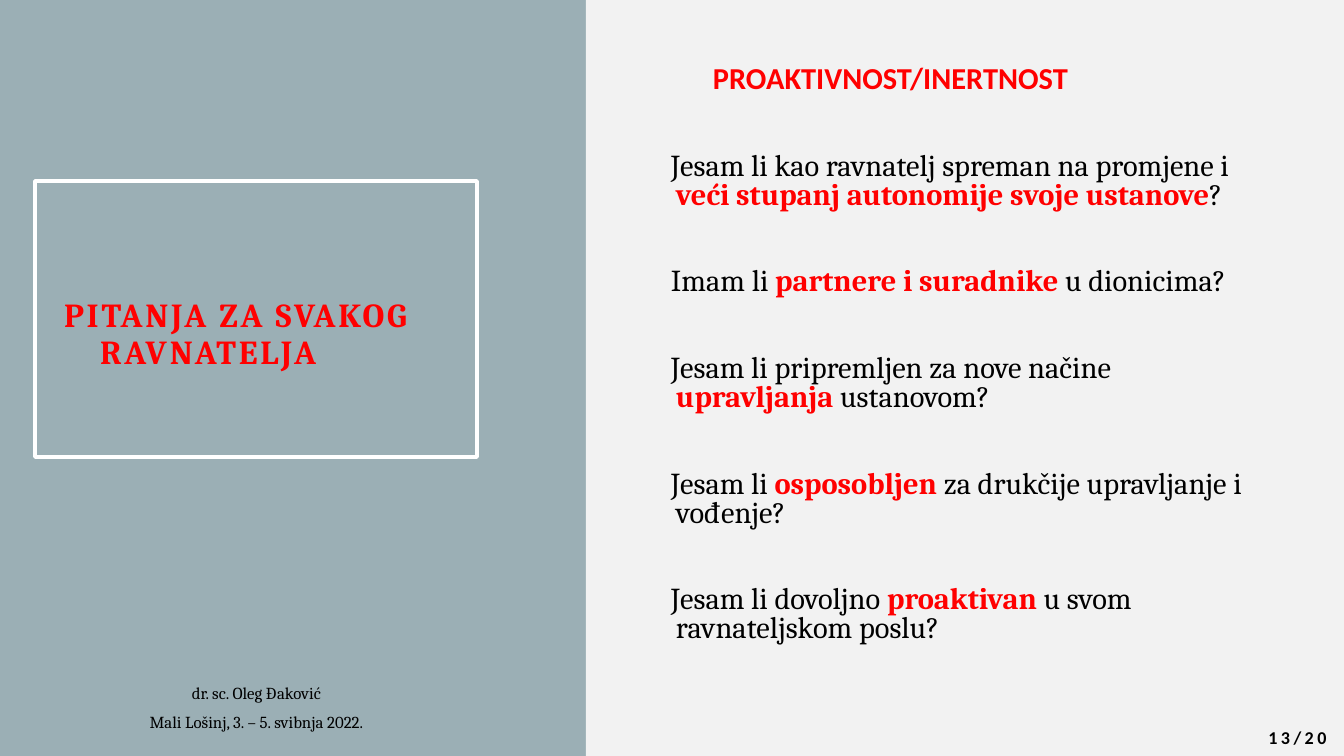
import pptx
import pptx.util
import pptx.dml.color
import pptx.enum.shapes
import pptx.enum.text
import pptx.oxml
import pptx.oxml.ns
from dataclasses import dataclass

SCALE = 914400 / 100.8  # EMU in one px
ALIGN = pptx.enum.text.PP_ALIGN
ANCHOR = pptx.enum.text.MSO_ANCHOR


@dataclass(frozen=True)
class Theme:
    backdrop: str = "9BAFB5"
    panel: str = "F2F2F2"
    frame: str = "FFFFFF"
    accent: str = "FF0000"
    ink: str = "000000"
    serif: str = "Cambria"
    sans: str = "Calibri"
    title_pt: float = 24
    body_pt: float = 21.7
    credit_pt: float = 12
    number_pt: float = 12.9


THEME = Theme()

# Each question: text before the stress, stressed words, text after
QUESTIONS = [
    ("Jesam li kao ravnatelj spreman na promjene i ",
     "veći stupanj autonomije svoje ustanove", "?"),
    ("Imam li ", "partnere i suradnike ", "u dionicima?"),
    ("Jesam li pripremljen za nove načine ", "upravljanja", " ustanovom?"),
    ("Jesam li ", "osposobljen ", "za drukčije upravljanje i vođenje?"),
    ("Jesam li dovoljno ", "proaktivan", " u svom ravnateljskom poslu?"),
]


def px(n):
    return pptx.util.Emu(round(n * SCALE))


def rgb(value):
    return pptx.dml.color.RGBColor.from_string(value)


def set_all(obj, values):
    for name, value in values.items():
        setattr(obj, name, value)


def place(sp, left, top, width, height):
    set_all(sp, {"left": px(left), "top": px(top),
                 "width": px(width), "height": px(height)})


def setup_frame(tf, **values):
    set_all(tf, {"word_wrap": True,
                 "auto_size": pptx.enum.text.MSO_AUTO_SIZE.NONE, **values})


def add_run(p, text, size, font, color, bold=False, tracking=0):
    r = p.add_run()
    r.text = text
    set_all(r.font, {"size": pptx.util.Pt(size), "name": font, "bold": bold})
    r.font.color.rgb = rgb(color)
    if tracking:
        r.font._element.set("spc", str(round(tracking * 100)))


def add_paragraph(tf, first=False, left=0, indent=0, **values):
    p = tf.paragraphs[0] if first else tf.add_paragraph()
    set_all(p, values)
    pPr = p._p.get_or_add_pPr()
    pPr.set("marL", str(px(left)))
    pPr.set("indent", str(px(indent)))
    pPr.append(pptx.oxml.parse_xml(
        f"<a:buNone {pptx.oxml.ns.nsdecls('a')}/>"))
    return p


def add_panel(s):
    sp = s.shapes.add_shape(pptx.enum.shapes.MSO_SHAPE.RECTANGLE,
                            px(586), 0, px(758), px(756))
    sp.shadow.inherit = False
    sp.fill.solid()
    sp.fill.fore_color.rgb = rgb(THEME.panel)
    sp.line.fill.background()
    s.shapes._spTree.insert(2, sp._element)  # behind the placeholders


def fill_title(sp):
    place(sp, 35, 181, 442, 276)
    sp.line.color.rgb = rgb(THEME.frame)
    sp.line.width = pptx.util.Pt(2.5)
    tf = sp.text_frame
    setup_frame(tf, vertical_anchor=ANCHOR.MIDDLE, margin_left=px(20),
                margin_right=px(20), margin_top=px(52), margin_bottom=px(20))
    p = add_paragraph(tf, first=True, left=45, indent=-36,
                      alignment=ALIGN.LEFT, line_spacing=0.9)
    add_run(p, "PITANJA ZA SVAKOG RAVNATELJA", THEME.title_pt, THEME.serif,
            THEME.accent, bold=True, tracking=2)


def fill_questions(sp):
    place(sp, 641, 23, 635, 685)
    tf = sp.text_frame
    setup_frame(tf, vertical_anchor=ANCHOR.MIDDLE, margin_left=px(10),
                margin_right=px(10), margin_top=px(5), margin_bottom=px(25))
    p = add_paragraph(tf, first=True, left=62, line_spacing=0.8,
                      space_before=pptx.util.Pt(0))
    add_run(p, "PROAKTIVNOST/INERTNOST", THEME.body_pt, THEME.sans,
            THEME.accent, bold=True)
    for before, stress, after in QUESTIONS:
        p = add_paragraph(tf, left=25, indent=-5, line_spacing=0.8,
                          space_before=pptx.util.Pt(41))
        add_run(p, before, THEME.body_pt, THEME.serif, THEME.ink)
        add_run(p, stress, THEME.body_pt, THEME.serif, THEME.accent, bold=True)
        add_run(p, after, THEME.body_pt, THEME.serif, THEME.ink)


def add_note(s, box, lines, size, font, spacing, bold=False, tracking=0):
    tf = s.shapes.add_textbox(*map(px, box)).text_frame
    setup_frame(tf)
    for i, line in enumerate(lines):
        p = add_paragraph(tf, first=i == 0, alignment=ALIGN.CENTER, **spacing)
        add_run(p, line, size, font, THEME.ink, bold, tracking)


def main():
    prs = pptx.Presentation()
    set_all(prs, {"slide_width": px(1344), "slide_height": px(756)})
    s = prs.slides.add_slide(prs.slide_layouts[1])
    s.background.fill.solid()
    s.background.fill.fore_color.rgb = rgb(THEME.backdrop)

    # Left: framed title; right: questions on a light panel
    add_panel(s)
    fill_title(s.shapes.title)
    fill_questions(s.placeholders[1])

    # Author, place and date, then the page number
    add_note(s, (82, 678, 349, 59),
             ["dr. sc. Oleg Đaković", "Mali Lošinj, 3. – 5. svibnja 2022."],
             THEME.credit_pt, THEME.serif, {"space_after": pptx.util.Pt(6)})
    add_note(s, (1251, 724, 93, 32), ["13/20"], THEME.number_pt, THEME.sans,
             {"line_spacing": 0.9}, bold=True, tracking=2.5)

    prs.save("out.pptx")


if __name__ == "__main__":
    main()
